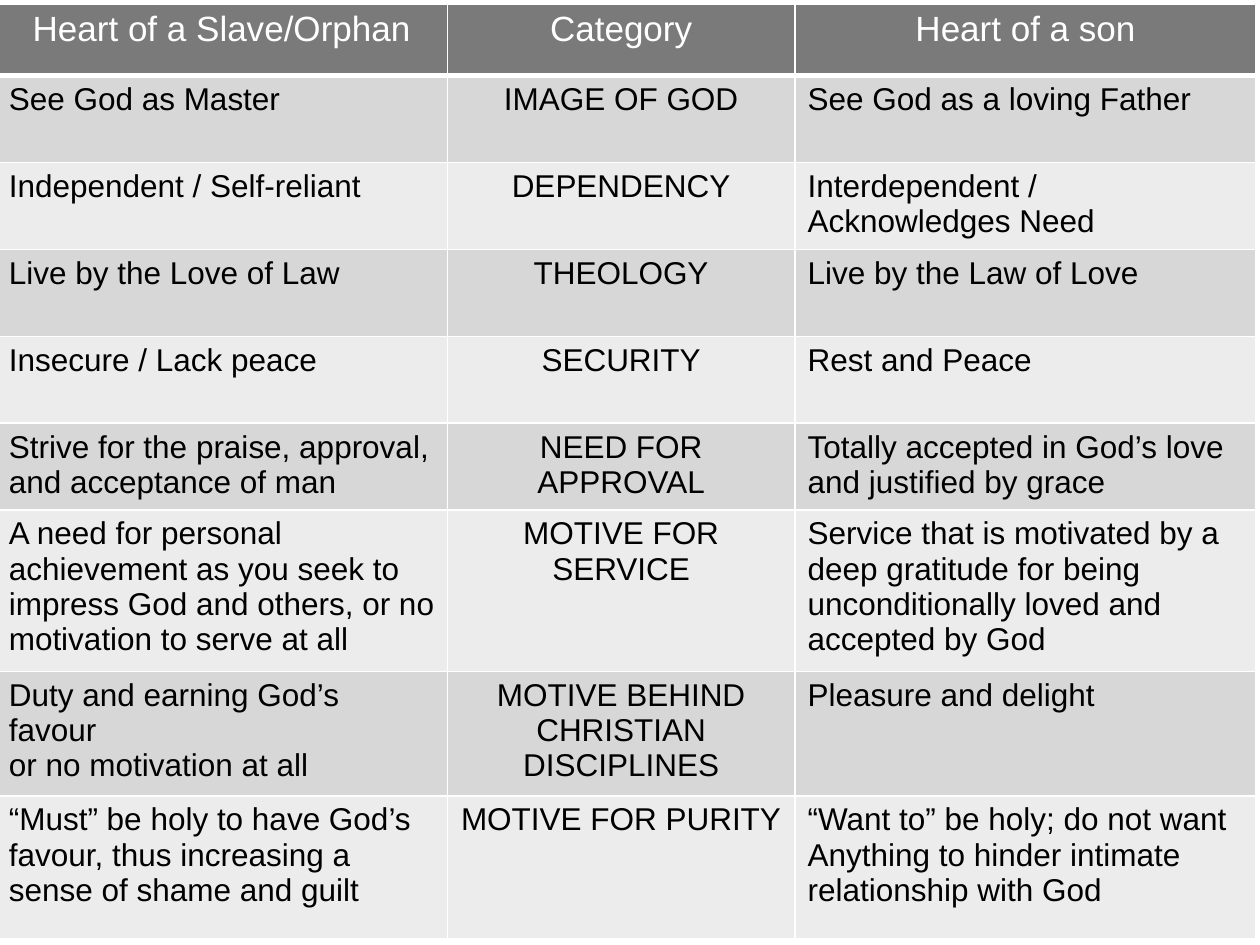
import pptx
import pptx.util
import pptx.dml.color
import pptx.enum.text
import pptx.oxml.ns
from lxml import etree

Inches, Pt = pptx.util.Inches, pptx.util.Pt
RGB = pptx.dml.color.RGBColor.from_string
ALIGN = pptx.enum.text.PP_ALIGN
qn = pptx.oxml.ns.qn

COLORS = {"head": "7A7A7A", "dark": "D7D7D7", "light": "ECECEC",
          "line": "FFFFFF", "title": "FFFFFF", "text": "000000"}

# Each line break within a cell starts a new paragraph
ROWS = [
    ("Heart of a Slave/Orphan", "Category", "Heart of a son"),
    ("See God as Master", "IMAGE OF GOD", "See God as a loving Father"),
    ("Independent / Self-reliant", "DEPENDENCY",
     "Interdependent / Acknowledges Need"),
    ("Live by the Love of Law", "THEOLOGY", "Live by the Law of Love"),
    ("Insecure / Lack peace", "SECURITY", "Rest and Peace"),
    ("Strive for the praise, approval,\nand acceptance of man",
     "NEED FOR APPROVAL",
     "Totally accepted in God’s love\nand justified by grace"),
    ("A need for personal achievement as you seek to impress God and others, "
     "or no\nmotivation to serve at all",
     "MOTIVE FOR SERVICE",
     "Service that is motivated by a deep gratitude for being "
     "unconditionally loved and accepted by God"),
    ("Duty and earning God’s favour\nor no motivation at all",
     "MOTIVE BEHIND CHRISTIAN\nDISCIPLINES", "Pleasure and delight"),
    ("“Must” be holy to have God’s favour, thus increasing a sense of shame "
     "and guilt",
     "MOTIVE FOR PURITY",
     "“Want to” be holy; do not want\n"
     "Anything to hinder intimate relationship with God"),
]
WIDTHS = [3.58, 2.76, 3.66]
HEIGHTS = [0.57] + [0.69] * 5 + [1.28, 0.99, 1.13]


def border(cell, side, width):
    props = cell._tc.get_or_add_tcPr()
    line = etree.SubElement(props, qn("a:ln" + side), w=str(Pt(width)))
    fill = etree.SubElement(line, qn("a:solidFill"))
    etree.SubElement(fill, qn("a:srgbClr"), val=COLORS["line"])


# Slide
deck = pptx.Presentation()
deck.slide_width, deck.slide_height = Inches(10), Inches(7.5)
slide = deck.slides.add_slide(deck.slide_layouts[6])

# Table grid
table = slide.shapes.add_table(
    len(ROWS), len(WIDTHS), Inches(-0.03), Inches(0.03),
    Inches(sum(WIDTHS)), Inches(sum(HEIGHTS))).table
for col, width in zip(table.columns, WIDTHS):
    col.width = Inches(width)
for row, height in zip(table.rows, HEIGHTS):
    row.height = Inches(height)

# Cells: header row, then alternating bands with a centred middle column
for r, texts in enumerate(ROWS):
    head = r == 0
    shade = "head" if head else "dark" if r % 2 else "light"
    for c, text in enumerate(texts):
        cell = table.cell(r, c)
        for side in "LRTB":
            border(cell, side, 3 if head and side == "B" else 1)
        cell.fill.solid()
        cell.fill.fore_color.rgb = RGB(COLORS[shade])
        frame = cell.text_frame
        for i, part in enumerate(text.split("\n")):
            para = frame.add_paragraph() if i else frame.paragraphs[0]
            para.alignment = ALIGN.CENTER if head or c == 1 else ALIGN.LEFT
            run = para.add_run()
            run.text = part
            run.font.name = "Arial"
            run.font.size = Pt(20 if head else 18)
            run.font.bold = False
            run.font.color.rgb = RGB(COLORS["title" if head else "text"])

deck.save("out.pptx")
